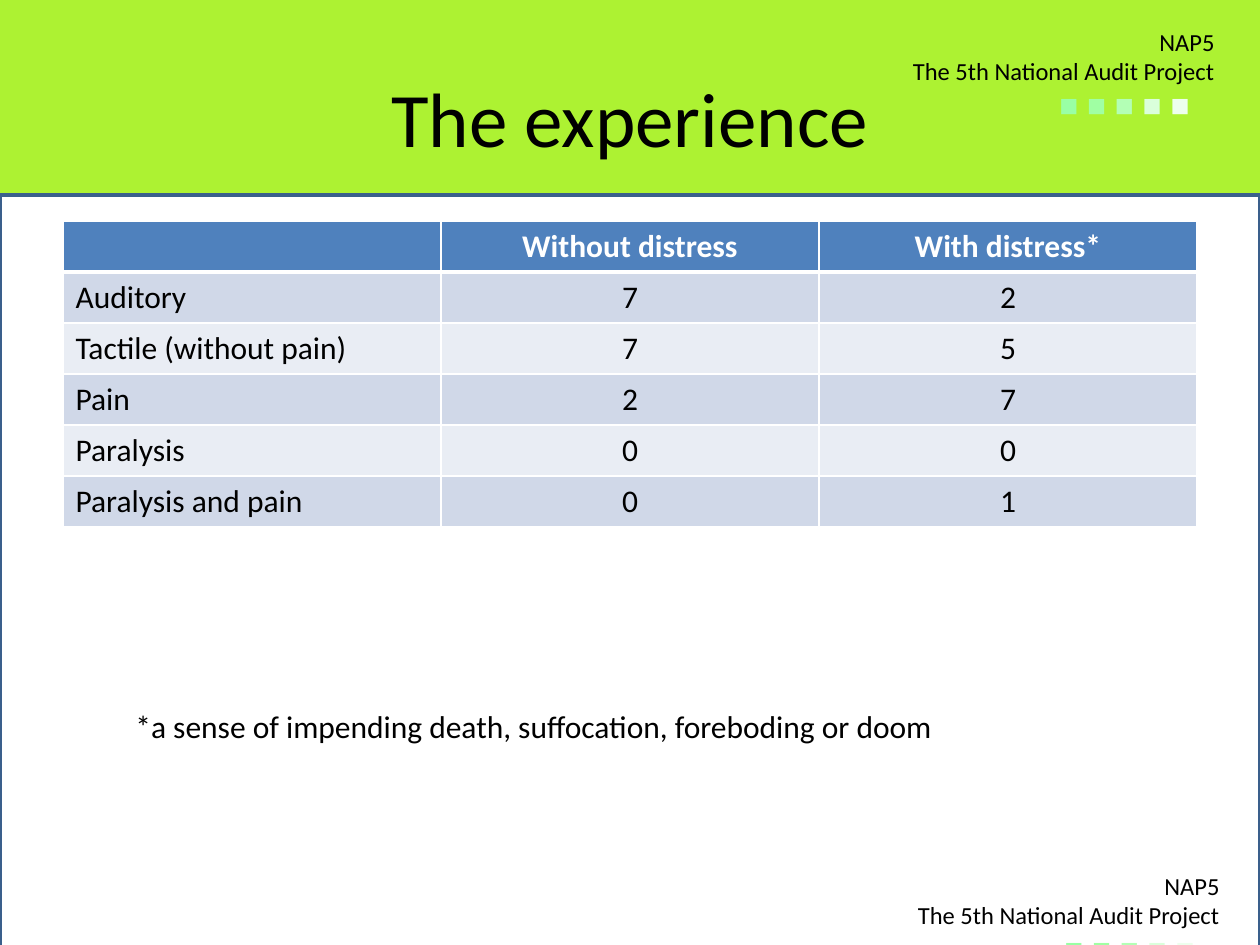
from dataclasses import dataclass
from typing import Any, NamedTuple

from lxml.etree import SubElement
from pptx import Presentation
from pptx.dml.color import RGBColor as Rgb
from pptx.enum.shapes import MSO_SHAPE as Preset
from pptx.enum.text import MSO_ANCHOR as Anchor, PP_ALIGN as Align
from pptx.oxml.ns import qn
from pptx.util import Emu, Pt

PX_PER_INCH = 126
EMU_PER_PX = 914400 / PX_PER_INCH


@dataclass(frozen=True)
class Theme:
    background: str = "ADF232"
    panel: str = "FFFFFF"
    panel_line: str = "3A5F8C"
    text: str = "000000"
    header_text: str = "FFFFFF"
    header_fill: str = "4F81BD"
    bands: tuple[str, ...] = ("D0D8E8", "E9EDF4")
    border: str = "FFFFFF"
    squares: tuple[str, ...] = ("99FFA4", "A0FFA3", "B3FFB5", "DAFFDB", "EDFFED")
    font: str = "Calibri"
    square_font: str = "Arial"
    title_size: int = 44
    body_size: int = 18
    brand_size: int = 14


THEME = Theme()


class Box(NamedTuple):
    left: int
    top: int
    width: int
    height: int


class Run(NamedTuple):
    text: str
    size: int = THEME.body_size
    color: str = THEME.text
    font: str = THEME.font
    bold: bool = False


class Line(NamedTuple):
    runs: list[Run]
    align: Align = Align.LEFT
    indent: int = 0


SLIDE = Box(0, 0, 1260, 945)
PANEL = Box(0, 195, 1260, 804)
TITLE = Box(63, 38, 1134, 157)
BRANDS = [Box(828, 25, 399, 100), Box(833, 869, 399, 100)]
TABLE = Box(63, 221, 1134, 306)
FOOTNOTE = Box(123, 701, 833, 50)
SQUARES_INDENT = 219

ROWS = [
    ("", "Without distress", "With distress*"),
    ("Auditory", "7", "2"),
    ("Tactile (without pain)", "7", "5"),
    ("Pain", "2", "7"),
    ("Paralysis", "0", "0"),
    ("Paralysis and pain", "0", "1"),
]


def px(length: float) -> Emu:
    return Emu(round(length * EMU_PER_PX))


def place(box: Box) -> list[Emu]:
    return [px(length) for length in box]


def apply(target: Any, values: dict[str, Any]) -> None:
    for name, value in values.items():
        setattr(target, name, value)


def write(text_frame: Any, lines: list[Line]) -> None:
    for index, line in enumerate(lines):
        paragraph = text_frame.paragraphs[0] if index == 0 else text_frame.add_paragraph()
        paragraph.alignment = line.align
        if line.indent:
            properties = paragraph._p.get_or_add_pPr()
            properties.set("marL", str(px(line.indent)))
            properties.set("indent", "0")
        for item in line.runs:
            run = paragraph.add_run()
            run.text = item.text
            apply(run.font, {"name": item.font, "size": Pt(item.size), "bold": item.bold})
            run.font.color.rgb = Rgb.from_string(item.color)


def add_text(slide: Any, box: Box, lines: list[Line],
             anchor: Anchor = Anchor.MIDDLE, wrap: bool = True) -> None:
    text_frame = slide.shapes.add_textbox(*place(box)).text_frame
    apply(text_frame, {"word_wrap": wrap, "vertical_anchor": anchor})
    write(text_frame, lines)


def add_panel(slide: Any, box: Box) -> None:
    shape = slide.shapes.add_shape(Preset.RECTANGLE, *place(box))
    shape.shadow.inherit = False
    shape.fill.solid()
    shape.fill.fore_color.rgb = Rgb.from_string(THEME.panel)
    shape.line.color.rgb = Rgb.from_string(THEME.panel_line)
    shape.line.width = Pt(2)


def add_brand(slide: Any, box: Box) -> None:
    names = [Line([Run(text, THEME.brand_size)], Align.RIGHT)
             for text in ("NAP5", "The 5th National Audit Project")]
    last = len(THEME.squares) - 1
    squares = [Run("■" if index == last else "■ ", color=color, font=THEME.square_font)
               for index, color in enumerate(THEME.squares)]
    add_text(slide, box, names + [Line(squares, indent=SQUARES_INDENT)])


def set_borders(cell: Any, widths: dict[str, int]) -> None:
    properties = cell._tc.get_or_add_tcPr()
    for position, (side, width) in enumerate(widths.items()):
        border = SubElement(properties, qn(f"a:ln{side}"), w=str(Pt(width)))
        fill = SubElement(border, qn("a:solidFill"))
        SubElement(fill, qn("a:srgbClr"), val=THEME.border)
        properties.insert(position, border)


def add_table(slide: Any, box: Box, rows: list[tuple[str, ...]]) -> None:
    table = slide.shapes.add_table(len(rows), len(rows[0]), *place(box)).table
    for column in table.columns:
        column.width = px(box.width / len(rows[0]))
    for row_index, values in enumerate(rows):
        table.rows[row_index].height = px(box.height / len(rows))
        header = row_index == 0
        fill = THEME.header_fill if header else THEME.bands[(row_index - 1) % 2]
        color = THEME.header_text if header else THEME.text
        for column_index, text in enumerate(values):
            cell = table.cell(row_index, column_index)
            cell.fill.solid()
            cell.fill.fore_color.rgb = Rgb.from_string(fill)
            set_borders(cell, {"L": 1, "R": 1, "T": 3 if row_index == 1 else 1,
                               "B": 3 if header else 1})
            if text:
                align = Align.CENTER if column_index else Align.LEFT
                write(cell.text_frame, [Line([Run(text, color=color, bold=header)], align)])


def main() -> None:
    presentation = Presentation()
    apply(presentation, {"slide_width": px(SLIDE.width), "slide_height": px(SLIDE.height)})
    slide = presentation.slides.add_slide(presentation.slide_layouts[6])

    # Background, white panel and project names
    slide.background.fill.solid()
    slide.background.fill.fore_color.rgb = Rgb.from_string(THEME.background)
    add_panel(slide, PANEL)
    for box in BRANDS:
        add_brand(slide, box)

    # Title, table and footnote
    add_text(slide, TITLE, [Line([Run("The experience", THEME.title_size)], Align.CENTER)])
    add_table(slide, TABLE, ROWS)
    footnote = "*a sense of impending death, suffocation, foreboding or doom"
    add_text(slide, FOOTNOTE, [Line([Run(footnote)])], Anchor.TOP, wrap=False)

    presentation.save("out.pptx")


if __name__ == "__main__":
    main()
